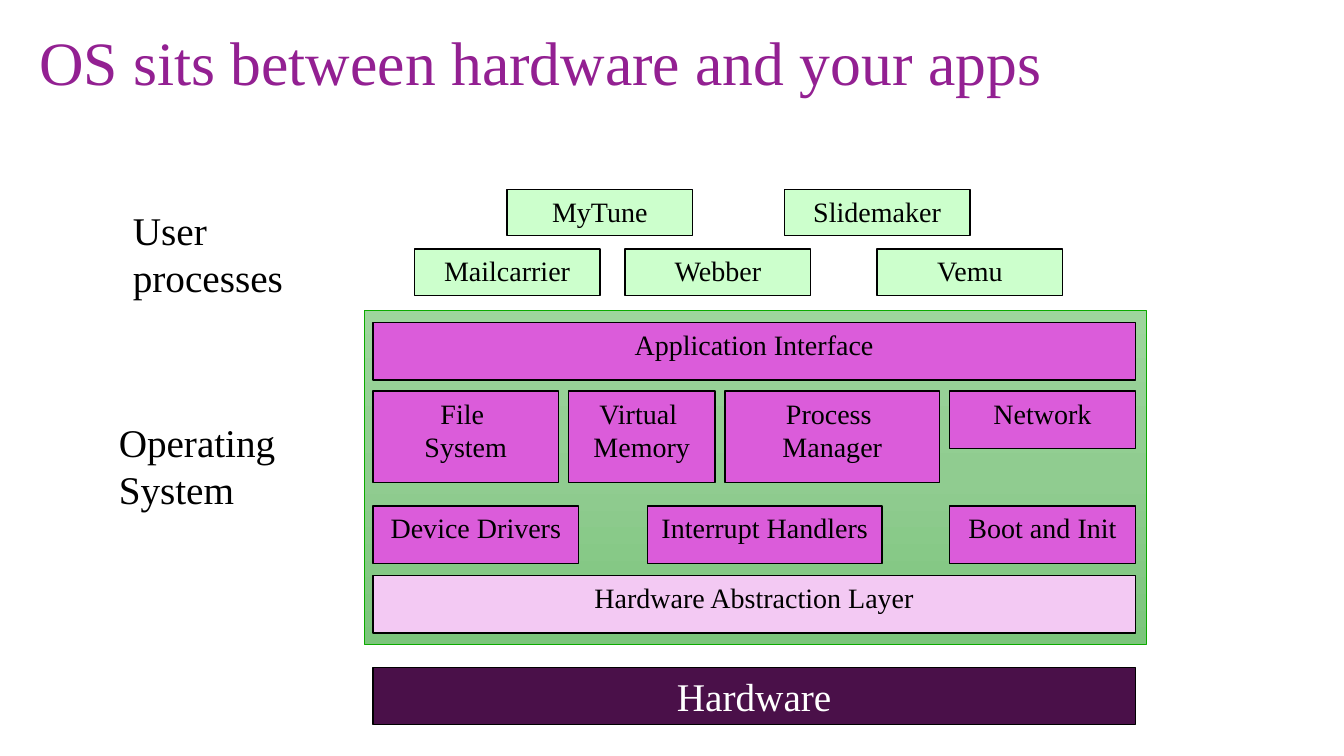
from copy import deepcopy
from dataclasses import dataclass

from pptx import Presentation
from pptx.dml.color import RGBColor
from pptx.enum.shapes import MSO_SHAPE as Kind
from pptx.enum.text import MSO_ANCHOR as Anchor, PP_ALIGN as Align
from pptx.oxml.ns import qn
from pptx.util import Emu, Pt

PX = 9144  # 100 px to the inch
FONT = "Times New Roman"
BLACK, WHITE, PLUM = "000000", "FFFFFF", "932092"
MINT, PINK, PALE, DARK = "CCFFCC", "DB5CDA", "F3C9F3", "4A1049"
LEAF = "0CAB00"
SHADES = [(0, "9ED59D"), (0.5, "90CC90"), (1, "7CC57C")]

LEFT, FULL, WIDE = 370, 756, 184
LAST = LEFT + FULL - WIDE
LOW, MID, TALL = 46, 57, 91
TOP, NEXT = 188, 247
CALLS, PARTS, CORE, BASE, METAL = 320, 388, 502, 571, 662


@dataclass
class Box:
    text: str
    x: int
    y: int
    w: int
    h: int = MID
    fill: str = PINK
    size: int = 20
    ink: str = BLACK


@dataclass
class Label:
    text: str
    x: int
    y: int
    w: int
    h: int
    size: int = 28
    ink: str = BLACK


APPS = [Box(name, x, y, WIDE, LOW, MINT) for name, x, y in [
    ("Mailcarrier", 411, NEXT), ("Webber", 620, NEXT),
    ("Slidemaker", 778, TOP), ("Vemu", 870, NEXT), ("MyTune", 503, TOP)]]

SYSTEM = [
    Box("Application Interface", LEFT, CALLS, FULL),
    Box("File \vSystem", LEFT, PARTS, WIDE, TALL),
    Box("Virtual \vMemory", 564, PARTS, 145, TALL),
    Box("Process \vManager", 719, PARTS, 213, TALL),
    Box("Network", LAST, PARTS, WIDE),
    Box("Device Drivers", LEFT, CORE, 204),
    Box("Interrupt Handlers", 642, CORE, 233),
    Box("Boot and Init", LAST, CORE, WIDE),
    Box("Hardware Abstraction Layer", LEFT, BASE, FULL, fill=PALE),
]
HARDWARE = Box("Hardware", LEFT, METAL, FULL, fill=DARK, size=28, ink=WHITE)

TITLE = Label("OS sits between hardware and your apps",
              29, 17, 1273, 97, 44, PLUM)
SIDES = [Label("User processes", 122, 200, 217, 104),
         Label("Operating System", 108, 410, 233, 104)]


def color(code: str) -> RGBColor:
    return RGBColor.from_string(code)


def place(*sides: int) -> list[Emu]:
    return [Emu(side * PX) for side in sides]


def assign(target, values: dict) -> None:
    for name, value in values.items():
        setattr(target, name, value)


def write(frame, item: Box | Label, look: dict, para: dict) -> None:
    """Put the item's text in a frame, with frame and paragraph formats."""
    frame.text = item.text
    assign(frame, look)
    line = frame.paragraphs[0]
    assign(line, para)
    for run in line.runs:
        assign(run.font, {"name": FONT, "size": Pt(item.size)})
        run.font.color.rgb = color(item.ink)


def add_rect(slide, sides: tuple[int, ...], edge: str, width: float):
    rect = slide.shapes.add_shape(Kind.RECTANGLE, *place(*sides))
    rect.shadow.inherit = False
    rect.line.color.rgb = color(edge)
    rect.line.width = Pt(width)
    return rect


def add_box(slide, box: Box) -> None:
    rect = add_rect(slide, (box.x, box.y, box.w, box.h), BLACK, 1)
    rect.fill.solid()
    rect.fill.fore_color.rgb = color(box.fill)
    write(rect.text_frame, box,
          {"word_wrap": False, "vertical_anchor": Anchor.TOP},
          {"alignment": Align.CENTER})


def add_label(slide, label: Label, anchor: Anchor = Anchor.TOP,
              space: float = 1.0) -> None:
    area = slide.shapes.add_textbox(
        *place(label.x, label.y, label.w, label.h))
    write(area.text_frame, label,
          {"word_wrap": True, "vertical_anchor": anchor},
          {"line_spacing": space})


def add_panel(slide) -> None:
    """Draw the shaded frame behind the parts of the system."""
    panel = add_rect(slide, (361, 308, 776, 331), LEAF, 0.5)
    panel.fill.gradient()
    panel.fill.gradient_angle = 270
    stops = next(panel.element.iter(qn("a:gsLst")))
    stops.append(deepcopy(stops[-1]))
    for stop, (spot, code) in zip(panel.fill.gradient_stops, SHADES):
        stop.position = spot
        stop.color.rgb = color(code)


def main() -> None:
    deck = Presentation()
    deck.slide_width, deck.slide_height = place(1333, 750)
    slide = deck.slides.add_slide(deck.slide_layouts[6])
    add_label(slide, TITLE, Anchor.MIDDLE, 0.9)
    add_panel(slide)
    for box in [HARDWARE, *APPS, *SYSTEM]:
        add_box(slide, box)
    for label in SIDES:
        add_label(slide, label)
    deck.save("out.pptx")


if __name__ == "__main__":
    main()
